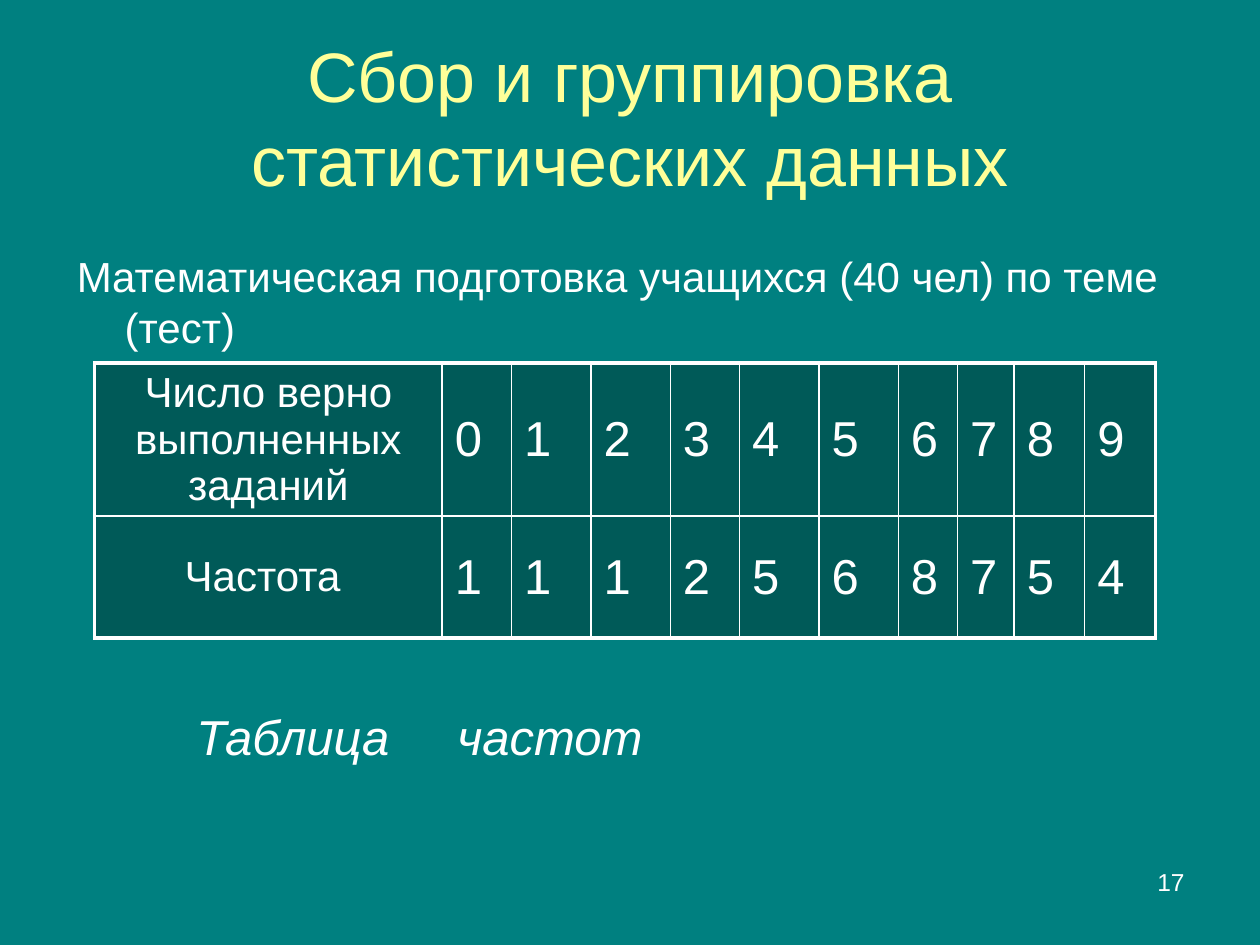
import dataclasses
import typing

import lxml.etree
import pptx
import pptx.dml.color
import pptx.enum.text
import pptx.oxml.ns
import pptx.util

Inches = pptx.util.Inches
Pt = pptx.util.Pt
qn = pptx.oxml.ns.qn
ALIGN = pptx.enum.text.PP_ALIGN
ANCHOR = pptx.enum.text.MSO_ANCHOR
FONT = "Arial"
WHITE = "FFFFFF"
CELL_FILL = "005A58"
THIN, THICK = 1, 2.25


@dataclasses.dataclass
class Style:
    size: float
    color: str = WHITE
    align: typing.Any = ALIGN.LEFT
    before: float = 0
    italic: bool = False


TITLE = Style(40, "FFFF99", ALIGN.CENTER)
BODY = Style(24, before=5)
LABEL = Style(24, align=ALIGN.CENTER, before=5)
VALUE = Style(28, before=5.5)
CAPTION = Style(28, before=14, italic=True)
NUMBER = Style(14, align=ALIGN.RIGHT)

ROWS = [
    ["Число верно выполненных заданий", *"0123456789"],
    ["Частота ", *"1112568754"],
]
COL_WIDTHS = [2.76, 0.55, 0.63, 0.63, 0.55, 0.63, 0.63, 0.47, 0.45, 0.56, 0.56]
ROW_HEIGHTS = [1.21, 0.97]


def rgb(color: str) -> pptx.dml.color.RGBColor:
    return pptx.dml.color.RGBColor.from_string(color)


def write(tf: typing.Any, text: str, style: Style) -> typing.Any:
    tf.text = text
    p = tf.paragraphs[0]
    p.alignment = style.align
    p.space_before = Pt(style.before)
    for r in p.runs:
        r.font.name = FONT
        r.font.size = Pt(style.size)
        r.font.italic = style.italic
        r.font.color.rgb = rgb(style.color)
    return p


def place(sp: typing.Any, x: float, y: float, w: float, h: float) -> None:
    sp.left, sp.top, sp.width, sp.height = map(Inches, (x, y, w, h))


def add_text(s: typing.Any, box: tuple, text: str, style: Style) -> typing.Any:
    sp = s.shapes.add_textbox(*map(Inches, box))
    sp.text_frame.word_wrap = True
    return write(sp.text_frame, text, style)


def set_border(cell: typing.Any, side: str, width: float) -> None:
    ln = lxml.etree.SubElement(cell._tc.get_or_add_tcPr(), qn(f"a:ln{side}"))
    ln.set("w", str(Pt(width)))
    fill = lxml.etree.SubElement(ln, qn("a:solidFill"))
    lxml.etree.SubElement(fill, qn("a:srgbClr")).set("val", WHITE)


def add_frequency_table(s: typing.Any) -> None:
    last_row, last_col = len(ROWS) - 1, len(COL_WIDTHS) - 1
    box = (0.75, 2.88, sum(COL_WIDTHS), sum(ROW_HEIGHTS))
    table = s.shapes.add_table(len(ROWS), len(COL_WIDTHS), *map(Inches, box)).table
    for col, width in zip(table.columns, COL_WIDTHS):
        col.width = Inches(width)
    for row, height in zip(table.rows, ROW_HEIGHTS):
        row.height = Inches(height)
    for i, values in enumerate(ROWS):
        for j, text in enumerate(values):
            cell = table.cell(i, j)
            write(cell.text_frame, text, VALUE if j else LABEL)
            cell.vertical_anchor = ANCHOR.MIDDLE
            outer = {"L": j == 0, "R": j == last_col, "T": i == 0, "B": i == last_row}
            for side, is_outer in outer.items():
                set_border(cell, side, THICK if is_outer else THIN)
            cell.fill.solid()
            cell.fill.fore_color.rgb = rgb(CELL_FILL)


def main() -> None:
    prs = pptx.Presentation()
    prs.slide_width, prs.slide_height = Inches(10), Inches(7.5)
    s = prs.slides.add_slide(prs.slide_layouts[1])
    s.background.fill.solid()
    s.background.fill.fore_color.rgb = rgb("008080")

    title, body = s.placeholders
    place(title, 0.5, 0.3, 9, 1.25)
    write(title.text_frame, "Сбор и группировка статистических данных", TITLE)
    title.text_frame.vertical_anchor = ANCHOR.MIDDLE

    place(body, 0.51, 1.94, 8.99, 0.63)
    text = "Математическая подготовка учащихся (40 чел) по теме (тест)"
    pPr = write(body.text_frame, text, BODY)._p.get_or_add_pPr()
    pPr.set("marL", str(Inches(0.38)))
    pPr.set("indent", str(Inches(-0.38)))
    lxml.etree.SubElement(pPr, qn("a:buNone"))
    for tf in (title.text_frame, body.text_frame):
        tf.auto_size = pptx.enum.text.MSO_AUTO_SIZE.NONE

    add_frequency_table(s)

    p = add_text(s, (1.46, 5.56, 7.01, 0.57), "Таблица\tчастот", CAPTION)
    tabs = lxml.etree.SubElement(p._p.get_or_add_pPr(), qn("a:tabLst"))
    tab = lxml.etree.SubElement(tabs, qn("a:tab"))
    tab.set("pos", str(Inches(2.07)))
    tab.set("algn", "l")

    add_text(s, (7.17, 6.83, 2.33, 0.52), "17", NUMBER)
    prs.save("out.pptx")


if __name__ == "__main__":
    main()
